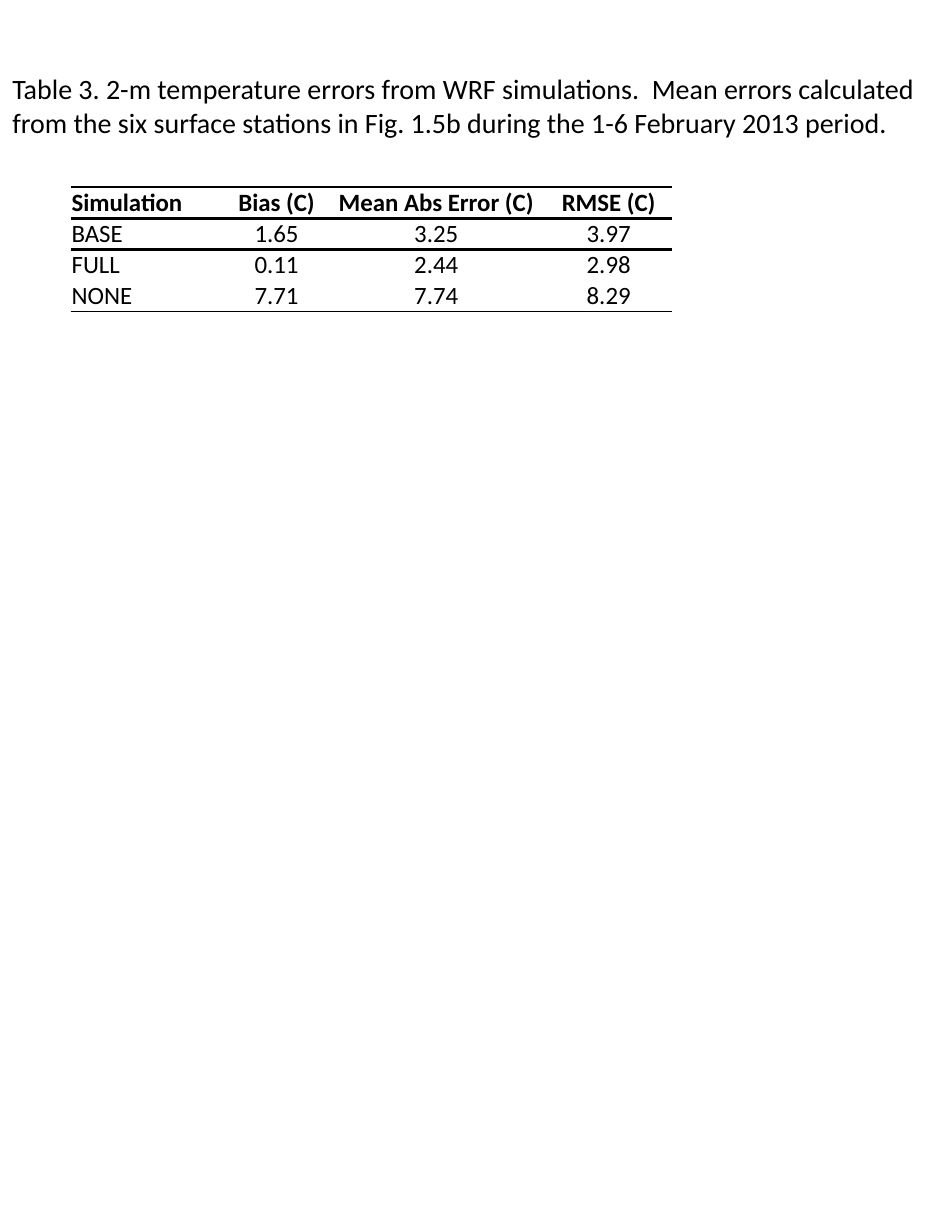
from dataclasses import dataclass

from lxml.etree import SubElement
from pptx import Presentation
from pptx.dml.color import RGBColor
from pptx.enum.text import MSO_ANCHOR as Anchor, MSO_AUTO_SIZE as AutoSize, PP_ALIGN as Align
from pptx.oxml.ns import qn
from pptx.util import Inches, Pt


@dataclass(frozen=True)
class Theme:
    font: str = "Calibri"
    ink: str = "000000"
    caption: int = 18
    body: int = 16
    thin: float = 1
    thick: float = 2.25


THEME = Theme()
CAPTION = ("Table 3. 2-m temperature errors from WRF simulations.  Mean errors calculated "
           "from the six surface stations in Fig. 1.5b during the 1-6 February 2013 period.")
ERRORS = [
    ("Simulation", "Bias (C)", "Mean Abs Error (C)", "RMSE (C)"),
    ("BASE", "1.65", "3.25", "3.97"),
    ("FULL", "0.11", "2.44", "2.98"),
    ("NONE", "7.71", "7.74", "8.29"),
]
COLUMN_WIDTHS = (1.39, 0.9, 1.95, 1.13)
# Horizontal rules from the top edge to the bottom edge of the table
RULES = (THEME.thin, THEME.thick, THEME.thick, None, THEME.thin)


def add_run(p, text, size, bold=False):
    r = p.add_run()
    r.text = text
    r.font.name, r.font.size, r.font.bold = THEME.font, Pt(size), bold
    r.font.color.rgb = RGBColor.from_string(THEME.ink)


def set_borders(cell, top, bottom):
    tcPr = cell._tc.get_or_add_tcPr()
    sides = (("a:lnL", None), ("a:lnR", None), ("a:lnT", top), ("a:lnB", bottom))
    for tag, width in sides:
        ln = SubElement(tcPr, qn(tag))
        if width is None:
            SubElement(ln, qn("a:noFill"))
        else:
            ln.set("w", str(Pt(width)))
            fill = SubElement(ln, qn("a:solidFill"))
            SubElement(fill, qn("a:srgbClr"), val=THEME.ink)


def add_caption(s, box):
    sp = s.shapes.title
    sp.left, sp.top, sp.width, sp.height = box
    tf = sp.text_frame
    tf.word_wrap = True
    tf.auto_size = AutoSize.SHAPE_TO_FIT_TEXT
    tf.vertical_anchor = Anchor.TOP
    tf.margin_left = tf.margin_right = Inches(0.11)
    tf.margin_top = tf.margin_bottom = Inches(0.06)
    p = tf.paragraphs[0]
    p.alignment = Align.LEFT
    add_run(p, CAPTION, THEME.caption)


def add_error_table(s, box):
    table = s.shapes.add_table(len(ERRORS), len(COLUMN_WIDTHS), *box).table
    table.horz_banding = False
    for column, width in zip(table.columns, COLUMN_WIDTHS):
        column.width = Inches(width)
    for i, row in enumerate(ERRORS):
        for j, text in enumerate(row):
            cell = table.cell(i, j)
            cell.vertical_anchor = Anchor.BOTTOM
            cell.margin_left = cell.margin_right = cell.margin_top = Inches(0.01)
            cell.margin_bottom = 0
            # Borders come before the fill in the cell properties
            set_borders(cell, RULES[i], RULES[i + 1])
            cell.fill.background()
            p = cell.text_frame.paragraphs[0]
            p.alignment = Align.CENTER if j else Align.LEFT
            add_run(p, text, THEME.body, bold=i == 0)


def main():
    prs = Presentation()
    prs.slide_width, prs.slide_height = Inches(8.5), Inches(11)
    s = prs.slides.add_slide(prs.slide_layouts[5])
    add_caption(s, (0, Inches(0.58), Inches(8.52), Inches(0.72)))
    add_error_table(s, (Inches(0.63), Inches(1.67), Inches(sum(COLUMN_WIDTHS)), Inches(1.11)))
    prs.save("out.pptx")


if __name__ == "__main__":
    main()
